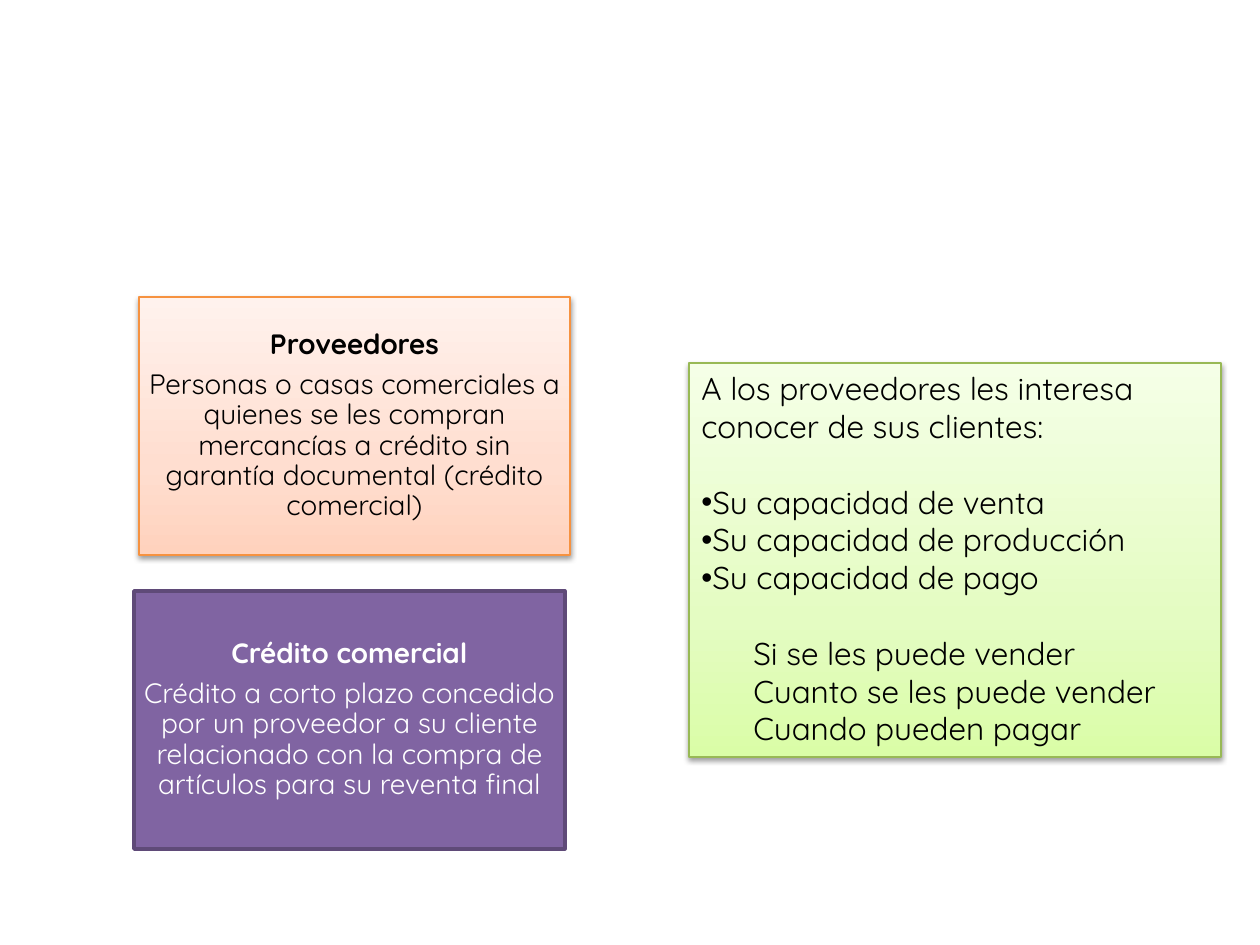
from dataclasses import dataclass
from typing import Optional

import pptx
import pptx.dml.color
import pptx.enum.shapes
import pptx.enum.text
import pptx.util
from lxml import etree

RGBColor = pptx.dml.color.RGBColor
ALIGN = pptx.enum.text.PP_ALIGN
ANCHOR = pptx.enum.text.MSO_ANCHOR

PX = 914400 / 126
FONT = "Quicksand"
NAMESPACE = "http://schemas.openxmlformats.org/drawingml/2006/main"

BLACK = RGBColor(0x00, 0x00, 0x00)
WHITE = RGBColor(0xFF, 0xFF, 0xFF)
ORANGE = RGBColor(0xF6, 0x92, 0x40)
PURPLE = RGBColor(0x80, 0x64, 0xA2)
DARK_PURPLE = RGBColor(0x5F, 0x4A, 0x78)
GREEN = RGBColor(0x98, 0xB9, 0x55)
PEACH_STOPS = (
    RGBColor(0xFF, 0xD2, 0xBD),
    RGBColor(0xFF, 0xDE, 0xD0),
    RGBColor(0xFF, 0xF2, 0xED),
)
LIME_STOPS = (
    RGBColor(0xDA, 0xFD, 0xA7),
    RGBColor(0xE4, 0xFC, 0xC2),
    RGBColor(0xF5, 0xFF, 0xE7),
)
STOP_POSITIONS = (0, 35, 100)


@dataclass
class Panel:
    left: int
    top: int
    width: int
    height: int
    fill: tuple[RGBColor, ...]  # one colour is solid, three make a gradient
    line: RGBColor
    line_width: float
    ink: RGBColor = BLACK


@dataclass
class Definition:
    panel: Panel
    term: str
    meaning: str


@dataclass
class Item:
    text: str
    bullet: bool = False
    indent: int = 0
    gap: float = 0


DEFINITIONS = [
    Definition(
        Panel(139, 297, 431, 258, PEACH_STOPS, ORANGE, 0.75),
        "Proveedores",
        "Personas o casas comerciales a quienes se les compran mercancías "
        "a crédito sin garantía documental (crédito comercial)",
    ),
    Definition(
        Panel(134, 591, 431, 258, (PURPLE,), DARK_PURPLE, 2, WHITE),
        "Crédito comercial",
        "Crédito a corto plazo concedido por un proveedor a su cliente "
        "relacionado con la compra de artículos para su reventa final",
    ),
]
INTEREST_PANEL = Panel(689, 363, 532, 394, LIME_STOPS, GREEN, 0.75)
LINE_GAP = 21.6
INTERESTS = [
    Item("A los proveedores les interesa conocer de sus clientes:"),
    Item("Su capacidad de venta", bullet=True, gap=LINE_GAP),
    Item("Su capacidad de producción", bullet=True),
    Item("Su capacidad de pago", bullet=True),
    Item("Si se les puede vender", indent=52, gap=LINE_GAP),
    Item("Cuanto se les puede vender", indent=52),
    Item("Cuando pueden pagar", indent=52),
]


def px(length: int) -> int:
    return round(length * PX)


def add_element(parent, tag: str, **attributes: str):
    return etree.SubElement(parent, f"{{{NAMESPACE}}}{tag}", attributes)


def add_gradient(shape, colors: tuple[RGBColor, ...]) -> None:
    """Fill upwards from the first colour to the last."""
    shape.fill.gradient()
    shape.fill.gradient_angle = 90
    stops = shape._element.spPr.find(f".//{{{NAMESPACE}}}gsLst")
    for stop in list(stops):
        stops.remove(stop)
    for position, color in zip(STOP_POSITIONS, colors):
        stop = add_element(stops, "gs", pos=str(position * 1000))
        add_element(stop, "srgbClr", val=str(color))


def add_shadow(shape) -> None:
    effects = shape._element.spPr.find(f"{{{NAMESPACE}}}effectLst")
    shadow = add_element(effects, "outerShdw", blurRad="40000", dist="20000",
                         dir="5400000", rotWithShape="0")
    color = add_element(shadow, "srgbClr", val=str(BLACK))
    add_element(color, "alpha", val="38000")


def add_panel(page, panel: Panel, anchor, inset: Optional[int] = None):
    """Draw a rectangle and return its text frame."""
    box = page.shapes.add_shape(
        pptx.enum.shapes.MSO_SHAPE.RECTANGLE,
        px(panel.left), px(panel.top), px(panel.width), px(panel.height))
    box.shadow.inherit = False
    if len(panel.fill) == 1:
        box.fill.solid()
        box.fill.fore_color.rgb = panel.fill[0]
    else:
        add_gradient(box, panel.fill)
        add_shadow(box)
    box.line.color.rgb = panel.line
    box.line.width = pptx.util.Pt(panel.line_width)
    frame = box.text_frame
    frame.word_wrap = True
    frame.vertical_anchor = anchor
    if inset is not None:
        frame.margin_left = frame.margin_right = px(inset)
        frame.margin_top = frame.margin_bottom = px(inset)
    return frame


def write_paragraph(frame, index: int, text: str, size: int, color: RGBColor, align):
    para = frame.paragraphs[0] if index == 0 else frame.add_paragraph()
    para.text = text
    para.alignment = align
    para.font.name = FONT
    para.font.size = pptx.util.Pt(size)
    para.font.color.rgb = color
    return para


def add_definition(page, definition: Definition) -> None:
    frame = add_panel(page, definition.panel, ANCHOR.MIDDLE, inset=9)
    for index, text in enumerate((definition.term, definition.meaning)):
        para = write_paragraph(frame, index, text, 16, definition.panel.ink, ALIGN.CENTER)
        para.font.bold = index == 0
        para.line_spacing = 0.9
        para.space_after = pptx.util.Pt(5.6)


def add_interests(page, panel: Panel, items: list[Item]) -> None:
    frame = add_panel(page, panel, ANCHOR.TOP)
    for index, item in enumerate(items):
        para = write_paragraph(frame, index, item.text, 18, panel.ink, ALIGN.LEFT)
        if item.gap:
            para.space_before = pptx.util.Pt(item.gap)
        properties = para._p.get_or_add_pPr()
        properties.set("marL", str(px(item.indent)))
        if item.bullet:
            # Bullet elements come before the default run properties
            defaults = properties.find(f"{{{NAMESPACE}}}defRPr")
            font = etree.Element(f"{{{NAMESPACE}}}buFont", typeface="Arial")
            mark = etree.Element(f"{{{NAMESPACE}}}buChar", char="•")
            defaults.addprevious(font)
            defaults.addprevious(mark)


def main() -> None:
    deck = pptx.Presentation()
    deck.slide_width = pptx.util.Inches(10)
    deck.slide_height = pptx.util.Inches(7.5)
    page = deck.slides.add_slide(deck.slide_layouts[6])

    # Definitions on the left
    for definition in DEFINITIONS:
        add_definition(page, definition)

    # What suppliers want to know, on the right
    add_interests(page, INTEREST_PANEL, INTERESTS)

    deck.save("out.pptx")


if __name__ == "__main__":
    main()
